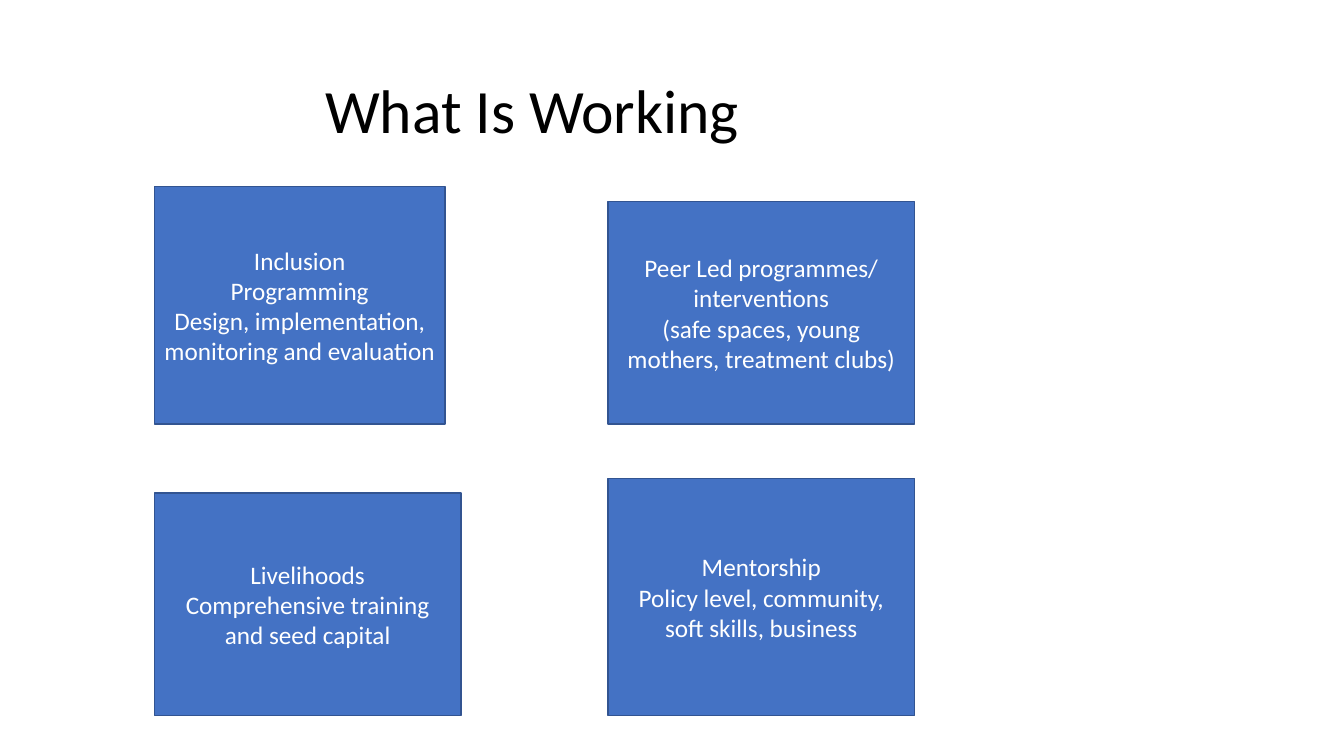
from pptx import Presentation
from pptx.dml.color import RGBColor
from pptx.enum.shapes import MSO_SHAPE
from pptx.enum.text import MSO_ANCHOR, PP_ALIGN
from pptx.util import Pt

RECTANGLE = MSO_SHAPE.RECTANGLE
MIDDLE = MSO_ANCHOR.MIDDLE
LEFT, CENTER = PP_ALIGN.LEFT, PP_ALIGN.CENTER

COLORS = {"title": "000000", "box": "4472C4", "border": "325491", "box_text": "FFFFFF"}
FONT = "Calibri"


def style_paragraph(paragraph, size, color, alignment):
    paragraph.alignment = alignment
    paragraph.font.name = FONT
    paragraph.font.size = Pt(size)
    paragraph.font.color.rgb = RGBColor.from_string(COLORS[color])


presentation = Presentation()
presentation.slide_width = Pt(960)
presentation.slide_height = Pt(540)
slide = presentation.slides.add_slide(presentation.slide_layouts[5])

heading = slide.shapes.title
heading.left, heading.top = Pt(66), Pt(28.8)
heading.width, heading.height = Pt(828), Pt(104.4)
heading.text_frame.text = "What Is Working"
heading.text_frame.vertical_anchor = MIDDLE
heading.text_frame.margin_left = Pt(166.3)
heading.text_frame.paragraphs[0].line_spacing = 0.9
style_paragraph(heading.text_frame.paragraphs[0], 44, "title", LEFT)

LEFT_COLUMN, RIGHT_COLUMN = 110.3, 434.3
UPPER_BOTTOM, LOWER_BOTTOM = 303, 511.2

approaches = [
    (LEFT_COLUMN, 133.2, 207.6, UPPER_BOTTOM,
     ["Inclusion", "Programming", "Design, implementation, monitoring and evaluation"]),
    (RIGHT_COLUMN, 144, 219, UPPER_BOTTOM,
     ["Peer Led programmes/ interventions", "(safe spaces, young mothers, treatment clubs)"]),
    (LEFT_COLUMN, 352.2, 219, LOWER_BOTTOM,
     ["Livelihoods", "Comprehensive training and seed capital"]),
    (RIGHT_COLUMN, 341.8, 219, LOWER_BOTTOM,
     ["Mentorship", "Policy level, community, soft skills, business"]),
]

for left, top, width, bottom, lines in approaches:
    approach = slide.shapes.add_shape(RECTANGLE, Pt(left), Pt(top), Pt(width), Pt(bottom - top))
    approach.shadow.inherit = False
    approach.fill.solid()
    approach.fill.fore_color.rgb = RGBColor.from_string(COLORS["box"])
    approach.line.color.rgb = RGBColor.from_string(COLORS["border"])
    approach.line.width = Pt(1)
    approach.text_frame.word_wrap = True
    approach.text_frame.vertical_anchor = MIDDLE
    approach.text_frame.text = "\n".join(lines)
    for paragraph in approach.text_frame.paragraphs:
        style_paragraph(paragraph, 18, "box_text", CENTER)

presentation.save("out.pptx")
